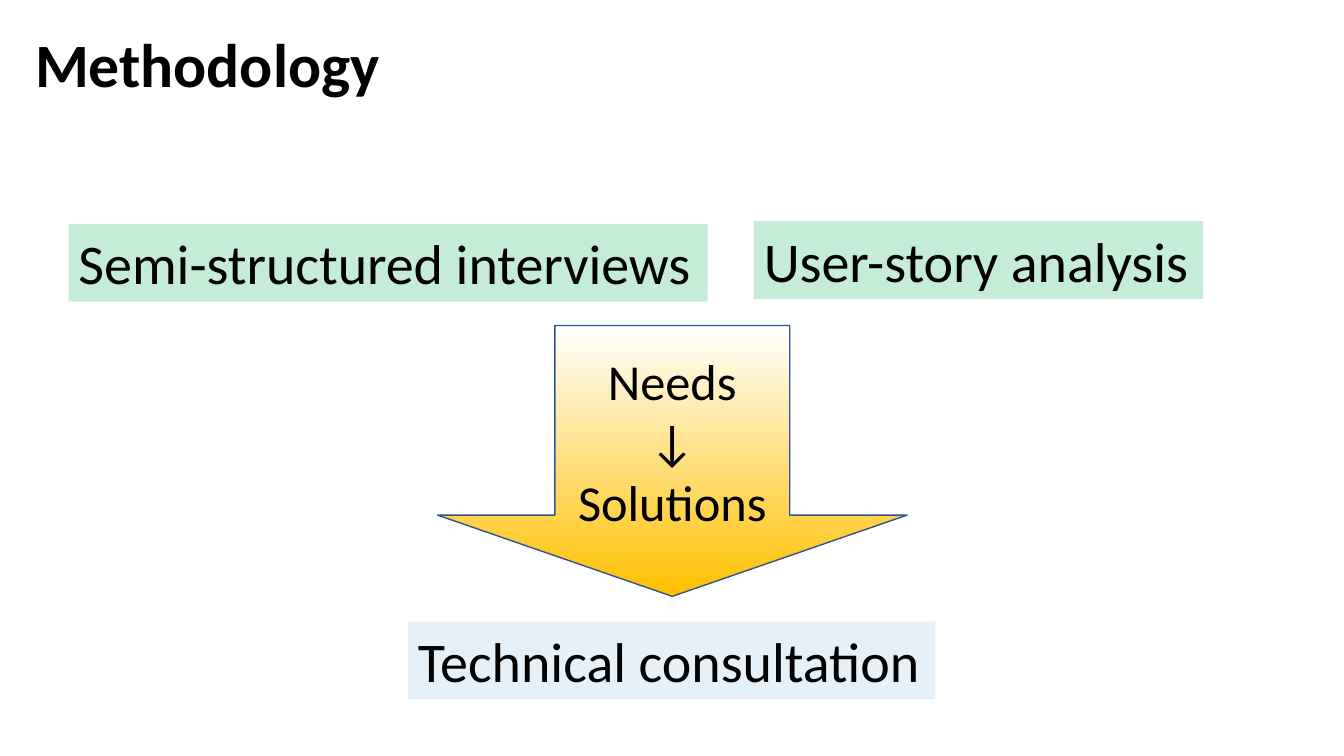
import pptx
import pptx.dml.color
import pptx.enum.shapes
import pptx.enum.text
import pptx.oxml
import pptx.oxml.ns
import pptx.util

Pt = pptx.util.Pt
SHAPES = pptx.enum.shapes.MSO_SHAPE
ALIGN = pptx.enum.text.PP_ALIGN
ANCHOR = pptx.enum.text.MSO_ANCHOR
AUTO_SIZE = pptx.enum.text.MSO_AUTO_SIZE

BLACK = "000000"
GREEN = "00B050"
PALE_BLUE = "BDD7EE"


def set_color(color_format, hex_color):
    color_format.rgb = pptx.dml.color.RGBColor.from_string(hex_color)


def apply_format(target, values):
    for name, value in values.items():
        setattr(target, name, value)


def write_text(frame, lines, frame_format, paragraph_format, font_format):
    apply_format(frame, frame_format)
    for index, line in enumerate(lines):
        paragraph = frame.add_paragraph() if index else frame.paragraphs[0]
        apply_format(paragraph, paragraph_format)
        run = paragraph.add_run()
        run.text = line
        apply_format(run.font, {"name": "Calibri", **font_format})
        set_color(run.font.color, BLACK)


def set_opacity(shape, percent):
    color = shape.fill._xPr.find(".//" + pptx.oxml.ns.qn("a:srgbClr"))
    alpha = pptx.oxml.parse_xml(
        f'<a:alpha {pptx.oxml.ns.nsdecls("a")} val="{percent * 1000}"/>')
    color.append(alpha)


def add_title(slide, text, left, top, width, height):
    title = slide.shapes.add_textbox(Pt(left), Pt(top), Pt(width), Pt(height))
    write_text(title.text_frame, [text], {"word_wrap": True},
               {"line_spacing": 0.9}, {"size": Pt(44), "bold": True})


def add_method(slide, text, left, top, width, color, opacity):
    method = slide.shapes.add_shape(
        SHAPES.RECTANGLE, Pt(left), Pt(top), Pt(width), Pt(55.5))
    method.shadow.inherit = False
    method.fill.solid()
    set_color(method.fill.fore_color, color)
    set_opacity(method, opacity)
    method.line.fill.background()
    write_text(method.text_frame, [text],
               {"word_wrap": False, "auto_size": AUTO_SIZE.SHAPE_TO_FIT_TEXT,
                "vertical_anchor": ANCHOR.TOP},
               {"alignment": ALIGN.LEFT}, {"size": Pt(40)})


def add_gradient_arrow(slide, lines, left, top, width, height):
    arrow = slide.shapes.add_shape(
        SHAPES.DOWN_ARROW, Pt(left), Pt(top), Pt(width), Pt(height))
    arrow.shadow.inherit = False
    arrow.adjustments[0] = 0.5
    arrow.adjustments[1] = 0.3
    arrow.fill.gradient()
    arrow.fill.gradient_angle = 270
    for stop, position, color in zip(
            arrow.fill.gradient_stops, (0, 1), ("FFFFFF", "FFC000")):
        stop.position = position
        set_color(stop.color, color)
    set_color(arrow.line.color, "325491")
    arrow.line.width = Pt(1)
    write_text(arrow.text_frame, lines,
               {"word_wrap": True, "vertical_anchor": ANCHOR.MIDDLE},
               {"alignment": ALIGN.CENTER}, {"size": Pt(36)})


def main():
    deck = pptx.Presentation()
    deck.slide_width, deck.slide_height = Pt(960), Pt(540)
    slide = deck.slides.add_slide(deck.slide_layouts[6])

    # Heading
    add_title(slide, "Methodology", 18, 21, 828, 104)

    # Sources of needs
    add_method(slide, "Semi-structured interviews", 49, 160, 456.5, GREEN, 23)
    add_method(slide, "User-story analysis", 538.5, 158, 321, GREEN, 23)

    # Step from needs to solutions
    add_gradient_arrow(slide, ["Needs", "↓", "Solutions"],
                       312.5, 232.5, 335.5, 193.5)

    # Outcome
    add_method(slide, "Technical consultation", 291.5, 444, 376.5, PALE_BLUE, 37)

    deck.save("out.pptx")


if __name__ == "__main__":
    main()
